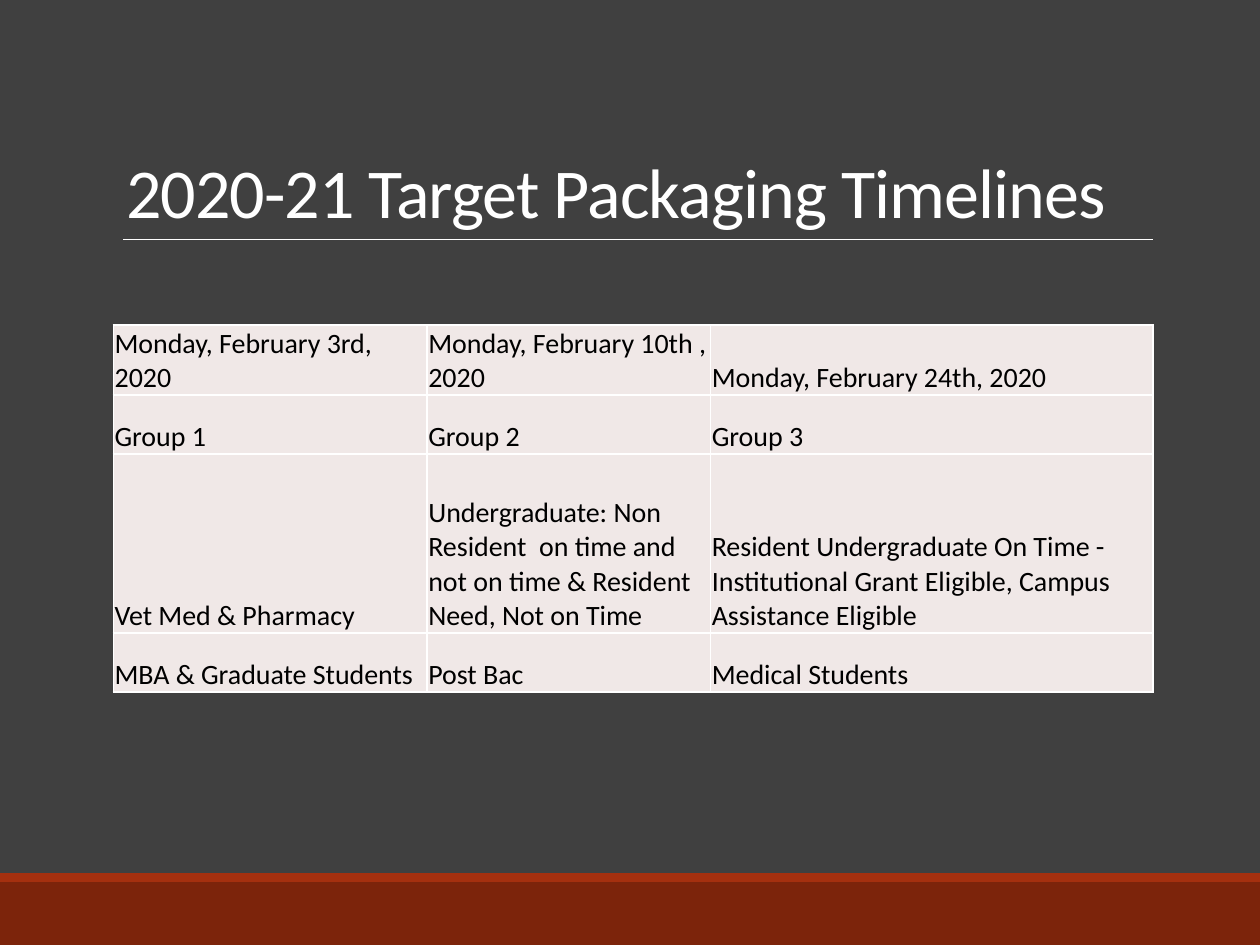
from dataclasses import dataclass

from lxml import etree
from pptx import Presentation
from pptx import util as u
from pptx.dml.color import RGBColor
from pptx.enum import shapes, text
from pptx.oxml import ns

WIDTH, HEIGHT = 10, 7.5
LEFT, CONTENT_WIDTH = 0.09 * WIDTH, 0.825 * WIDTH
FONT = "Calibri"
COLORS = {
    "background": "404040",
    "footer": "7C240B",
    "accent": "A5300F",
    "light": "FFFFFF",
    "cell": "F0E8E7",
    "ink": "000000",
}
COLUMN_WIDTHS = (2.49, 2.25, 3.51)
ROW_HEIGHTS = (0.47, 0.47, 1.42, 0.47)
TIMELINE = (
    ("Monday, February 3rd, 2020", "Monday, February 10th , 2020", "Monday, February 24th, 2020"),
    ("Group 1", "Group 2", "Group 3"),
    (
        "Vet Med & Pharmacy",
        "Undergraduate: Non Resident  on time and not on time & Resident Need, Not on Time",
        "Resident Undergraduate On Time - Institutional Grant Eligible, Campus Assistance Eligible",
    ),
    ("MBA & Graduate Students", "Post Bac", "Medical Students"),
)


@dataclass
class Band:
    top: float
    height: float
    color: str


BANDS = (Band(7, 0.5, "footer"), Band(6.93, 0.07, "accent"))


def color(name: str) -> RGBColor:
    return RGBColor.from_string(COLORS[name])


def format_text(para, size: float, ink: str) -> None:
    for span in para.runs:
        span.font.name = FONT
        span.font.size = u.Pt(size)
        span.font.color.rgb = color(ink)


def draw_band(page, band: Band) -> None:
    box = page.shapes.add_shape(
        shapes.MSO_SHAPE.RECTANGLE, 0, u.Inches(band.top), u.Inches(WIDTH), u.Inches(band.height)
    )
    box.shadow.inherit = False
    box.fill.solid()
    box.fill.fore_color.rgb = color(band.color)
    box.line.fill.background()


def draw_rule(page) -> None:
    rule = page.shapes.add_connector(
        shapes.MSO_CONNECTOR.STRAIGHT,
        u.Inches(0.98), u.Inches(1.9), u.Inches(LEFT + CONTENT_WIDTH), u.Inches(1.9),
    )
    rule.line.color.rgb = color("light")
    rule.line.width = u.Pt(0.5)
    etree.SubElement(rule._element.spPr, ns.qn("a:effectLst"))


def write_title(page, wording: str) -> None:
    title = page.shapes.title
    title.left, title.top = u.Inches(LEFT), u.Inches(0.31)
    title.width, title.height = u.Inches(CONTENT_WIDTH), u.Inches(1.59)
    frame = title.text_frame
    frame.text = wording
    frame.word_wrap = True
    frame.auto_size = text.MSO_AUTO_SIZE.NONE
    frame.vertical_anchor = text.MSO_ANCHOR.BOTTOM
    para = frame.paragraphs[0]
    para.alignment = text.PP_ALIGN.LEFT
    para.line_spacing = 0.85
    format_text(para, 40, "light")
    para.runs[0].font._element.set("spc", "-50")


def add_borders(cell) -> None:
    properties = cell._tc.get_or_add_tcPr()
    for index, side in enumerate(("lnL", "lnR", "lnT", "lnB")):
        line = etree.Element(ns.qn(f"a:{side}"), w=str(u.Pt(1)))
        fill = etree.SubElement(line, ns.qn("a:solidFill"))
        etree.SubElement(fill, ns.qn("a:srgbClr"), val=COLORS["light"])
        properties.insert(index, line)


def fill_cell(cell, wording: str) -> None:
    cell.text_frame.text = wording
    cell.vertical_anchor = text.MSO_ANCHOR.BOTTOM
    cell.margin_left = cell.margin_right = cell.margin_top = u.Inches(0.01)
    cell.margin_bottom = 0
    cell.fill.solid()
    cell.fill.fore_color.rgb = color("cell")
    format_text(cell.text_frame.paragraphs[0], 16, "ink")
    add_borders(cell)


def draw_timeline(page) -> None:
    table = page.shapes.add_table(
        len(ROW_HEIGHTS), len(COLUMN_WIDTHS),
        u.Inches(LEFT), u.Inches(2.58), u.Inches(CONTENT_WIDTH), u.Inches(sum(ROW_HEIGHTS)),
    ).table
    table.first_row = table.horz_banding = False
    for column, width in zip(table.columns, COLUMN_WIDTHS):
        column.width = u.Inches(width)
    for row, height, wordings in zip(table.rows, ROW_HEIGHTS, TIMELINE):
        row.height = u.Inches(height)
        for cell, wording in zip(row.cells, wordings):
            fill_cell(cell, wording)


def main() -> None:
    deck = Presentation()
    deck.slide_width, deck.slide_height = u.Inches(WIDTH), u.Inches(HEIGHT)
    page = deck.slides.add_slide(deck.slide_layouts.get_by_name("Title Only"))
    page.background.fill.solid()
    page.background.fill.fore_color.rgb = color("background")
    for band in BANDS:
        draw_band(page, band)
    draw_rule(page)
    write_title(page, "2020-21 Target Packaging Timelines")
    draw_timeline(page)
    deck.save("out.pptx")


if __name__ == "__main__":
    main()
